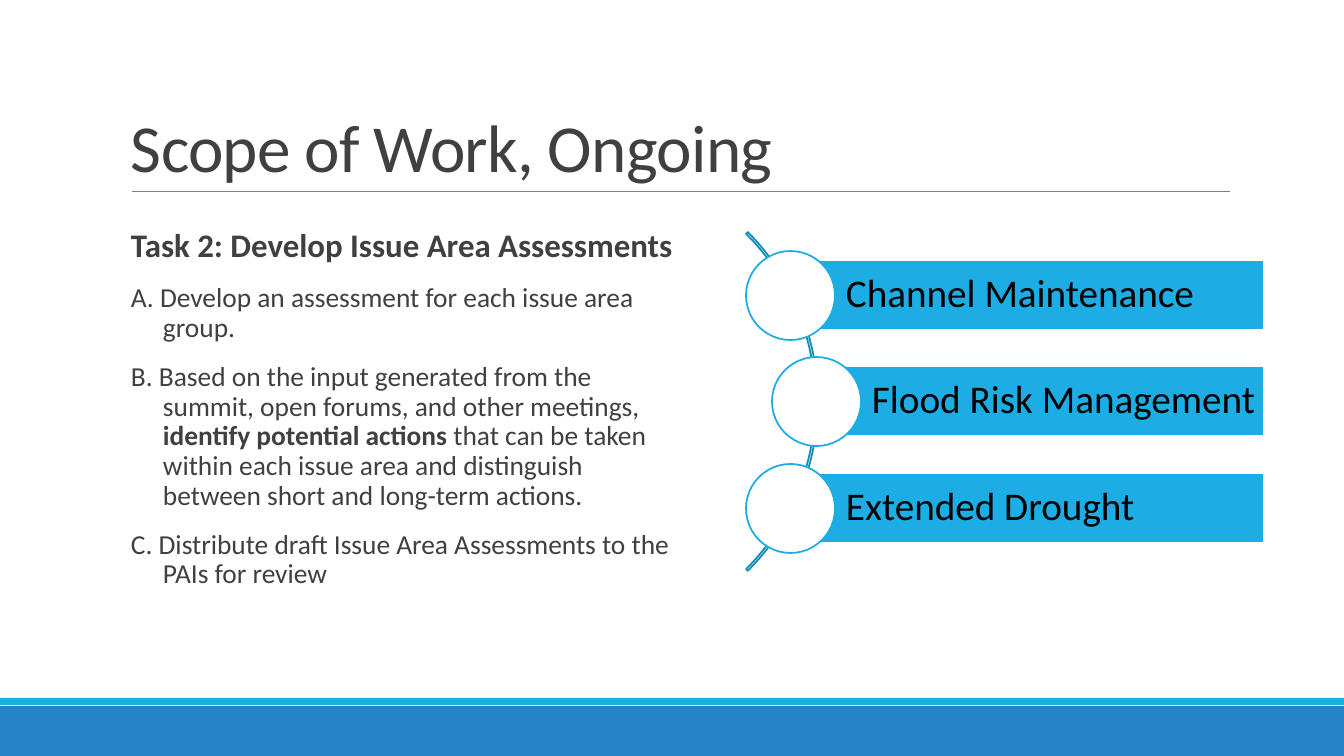
import pptx
import pptx.util
import pptx.dml.color
import pptx.enum.shapes
import pptx.enum.text
from lxml import etree

# Content: each paragraph is a list of lines, with *bold* words between stars
TITLE = "Scope of Work, Ongoing"
HEADING = ["*Task 2: Develop Issue Area Assessments*"]
TASKS = [
    ["A. Develop an assessment for each issue area", "group."],
    ["B. Based on the input generated from the",
     "summit, open forums, and other meetings,",
     "*identify potential actions* that can be taken",
     "within each issue area and distinguish",
     "between short and long-term actions."],
    ["C. Distribute draft Issue Area Assessments to the", "PAIs for review"],
]
# Issue area and the horizontal centre of its circle
ISSUES = [("Channel Maintenance", 790), ("Flood Risk Management", 816),
          ("Extended Drought", 790)]

FONT = "Calibri"
TEXT, BLUE, CYAN, ARC = "404040", "2683C6", "1CADE4", "168BB7"
WHITE, BLACK, GREY = "FFFFFF", "000000", "808080"
EMU_PER_PX = 914400 / 100.8
SHAPES = pptx.enum.shapes.MSO_SHAPE
ANCHORS = pptx.enum.text.MSO_ANCHOR


def px(*lengths):
    return [round(length * EMU_PER_PX) for length in lengths]


def color(value):
    return pptx.dml.color.RGBColor.from_string(value)


def add_shape(kind, bounds, fill=None, line=None):
    shape = page.shapes.add_shape(kind, *px(*bounds))
    shape.shadow.inherit = False
    if fill:
        shape.fill.solid()
        shape.fill.fore_color.rgb = color(fill)
    else:
        shape.fill.background()
    if line:
        shape.line.color.rgb = color(line)
        shape.line.width = pptx.util.Pt(1.25)
    else:
        shape.line.fill.background()
    return shape


def set_frame(shape, insets, anchor):
    frame = shape.text_frame
    frame.word_wrap = True
    frame.vertical_anchor = anchor
    (frame.margin_left, frame.margin_top,
     frame.margin_right, frame.margin_bottom) = px(*insets)
    return frame


def set_font(font, size, value):
    font.name = FONT
    font.size = pptx.util.Pt(size)
    font.color.rgb = color(value)


def fill_paragraph(para, lines, size):
    for row, line in enumerate(lines):
        if row:
            para.add_line_break()
        for part, words in enumerate(line.split("*")):
            if words:
                span = para.add_run()
                span.text = words
                set_font(span.font, size, TEXT)
                span.font.bold = part % 2 == 1


deck = pptx.Presentation()
deck.slide_width, deck.slide_height = px(1344, 756)
page = deck.slides.add_slide(deck.slide_layouts[6])

# Footer bands and title rule
add_shape(SHAPES.RECTANGLE, (0, 706, 1344, 50), BLUE)
add_shape(SHAPES.RECTANGLE, (0, 698, 1344, 7), CYAN)
rule = page.shapes.add_connector(pptx.enum.shapes.MSO_CONNECTOR.STRAIGHT,
                                 *px(132, 191, 1230, 191))
rule.line.color.rgb = color(GREY)
rule.line.width = pptx.util.Pt(0.5)
etree.SubElement(rule._element.spPr, pptx.oxml.ns.qn("a:effectLst"))

# Title
box = page.shapes.add_textbox(*px(121, 31, 1109, 160))
frame = set_frame(box, (10, 5, 10, 5), ANCHORS.BOTTOM)
frame.text = TITLE
para = frame.paragraphs[0]
para.line_spacing = 0.85
span = para.runs[0]
set_font(span.font, 48, TEXT)
span._r.get_or_add_rPr().set("spc", "-50")

# Task text, with hanging indents
box = page.shapes.add_textbox(*px(121, 224, 575, 391))
frame = set_frame(box, (0, 5, 0, 5), ANCHORS.TOP)
for index, lines in enumerate([HEADING] + TASKS):
    para = frame.add_paragraph() if index else frame.paragraphs[0]
    left, hang = px(42, -32) if index else px(10, 0)
    properties = para._p.get_or_add_pPr()
    properties.set("marL", str(left))
    properties.set("indent", str(hang))
    para.line_spacing = 0.9
    para.space_before = pptx.util.Pt(12 if index else 0)
    para.space_after = pptx.util.Pt(2)
    fill_paragraph(para, lines, 19.6 if index else 23.5)

# Issue areas: an arc behind, then a bar and a circle on each row
arc = add_shape(SHAPES.BLOCK_ARC, (339, 162, 479, 479), line=ARC)
for index, value in enumerate((189, 27, 0.005)):
    arc.adjustments[index] = value

BAR_RIGHT, BAR_HEIGHT, CIRCLE = 1264, 70, 89
for row, (issue, center_x) in enumerate(ISSUES):
    center_y = 295 + row * 213 // 2
    bar = add_shape(SHAPES.RECTANGLE,
                    (center_x, center_y - BAR_HEIGHT // 2,
                     BAR_RIGHT - center_x, BAR_HEIGHT), CYAN, WHITE)
    frame = set_frame(bar, (56, 8, 0, 8), ANCHORS.MIDDLE)
    frame.text = issue
    para = frame.paragraphs[0]
    para.alignment = pptx.enum.text.PP_ALIGN.LEFT
    para.line_spacing = 0.9
    set_font(para.runs[0].font, 28, BLACK)
    add_shape(SHAPES.OVAL, (center_x - CIRCLE // 2, center_y - CIRCLE // 2,
                            CIRCLE, CIRCLE), WHITE, CYAN)

deck.save("out.pptx")
